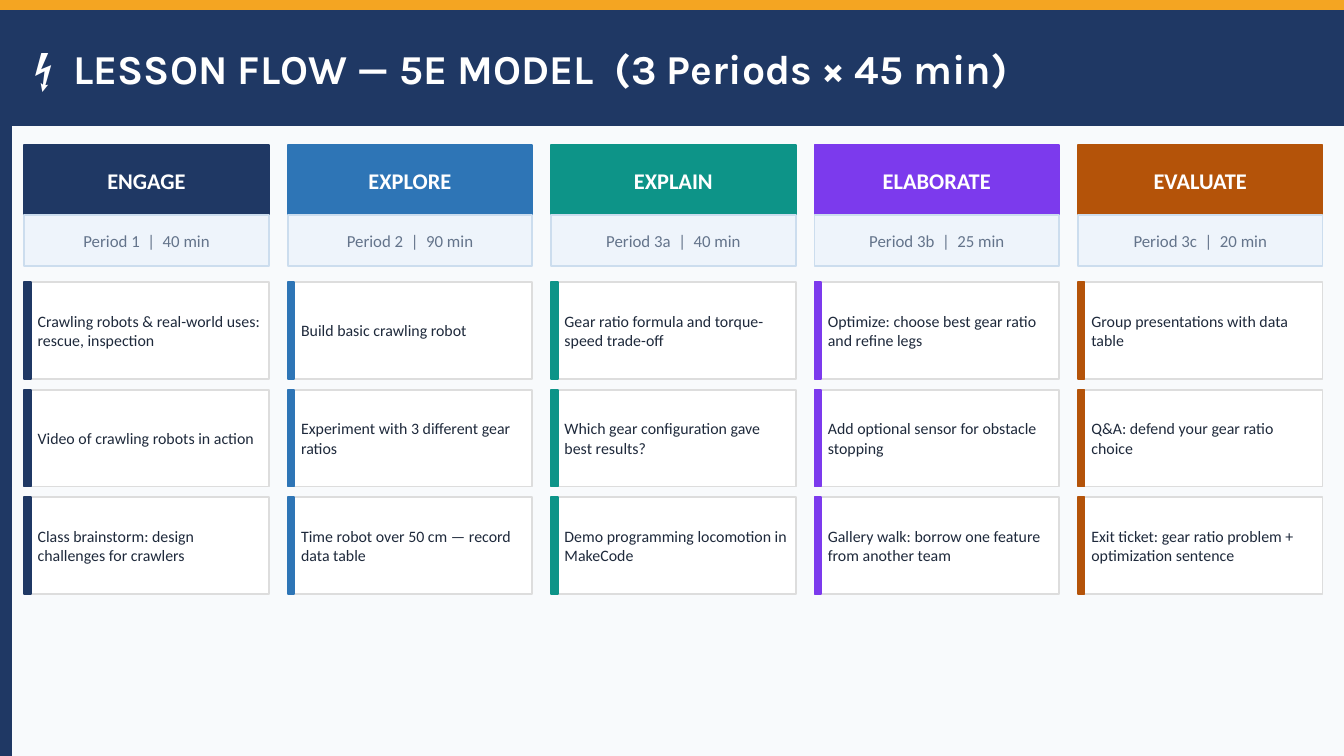
from dataclasses import dataclass

from pptx import Presentation
from pptx.dml.color import RGBColor
from pptx.enum.shapes import MSO_SHAPE
from pptx.enum.text import MSO_ANCHOR, PP_ALIGN
from pptx.util import Pt

NAVY, AMBER, WHITE = "1F3864", "F4A522", "FFFFFF"
SLIDE_W, SLIDE_H = 720, 405
EDGE = 5.76  # thickness of the top and left bands

# Column grid
COL_LEFT, COL_W, COL_PITCH = 12.96, 131.04, 141.12
HEAD_TOP, HEAD_H = 77.76, 37.44
PERIOD_TOP, PERIOD_H = HEAD_TOP + HEAD_H, 27.36
CARD_TOP, CARD_H, CARD_PITCH = 151.2, 51.84, 57.6
ACCENT_W, CARD_INDENT, CARD_TEXT_W = 3.6, 7.2, 120.96


@dataclass
class Phase:
    name: str
    period: str
    color: str
    activities: list[str]


PHASES = [
    Phase("ENGAGE", "Period 1  |  40 min", NAVY, [
        "Crawling robots & real-world uses: rescue, inspection",
        "Video of crawling robots in action",
        "Class brainstorm: design challenges for crawlers"]),
    Phase("EXPLORE", "Period 2  |  90 min", "2E75B6", [
        "Build basic crawling robot",
        "Experiment with 3 different gear ratios",
        "Time robot over 50 cm — record data table"]),
    Phase("EXPLAIN", "Period 3a  |  40 min", "0D9488", [
        "Gear ratio formula and torque-speed trade-off",
        "Which gear configuration gave best results?",
        "Demo programming locomotion in MakeCode"]),
    Phase("ELABORATE", "Period 3b  |  25 min", "7C3AED", [
        "Optimize: choose best gear ratio and refine legs",
        "Add optional sensor for obstacle stopping",
        "Gallery walk: borrow one feature from another team"]),
    Phase("EVALUATE", "Period 3c  |  20 min", "B45309", [
        "Group presentations with data table",
        "Q&A: defend your gear ratio choice",
        "Exit ticket: gear ratio problem + optimization sentence"]),
]


def rgb(color: str) -> RGBColor:
    return RGBColor.from_string(color)


def add_rect(s, x: float, y: float, w: float, h: float,
             fill: str, line: str | None = None) -> None:
    sp = s.shapes.add_shape(MSO_SHAPE.RECTANGLE, Pt(x), Pt(y), Pt(w), Pt(h))
    sp.shadow.inherit = False
    sp.fill.solid()
    sp.fill.fore_color.rgb = rgb(fill)
    sp.line.color.rgb = rgb(line or fill)
    sp.line.width = Pt(1)


def add_text(s, text: str, x: float, y: float, w: float, h: float, *,
             size: float, color: str, font: str = "Calibri",
             bold: bool = False, align: PP_ALIGN = PP_ALIGN.LEFT) -> None:
    tf = s.shapes.add_textbox(Pt(x), Pt(y), Pt(w), Pt(h)).text_frame
    tf.word_wrap = True
    tf.vertical_anchor = MSO_ANCHOR.MIDDLE
    tf.margin_left = tf.margin_top = tf.margin_right = tf.margin_bottom = 0
    p = tf.paragraphs[0]
    p.alignment = align
    r = p.add_run()
    r.text = text
    r.font.name = font
    r.font.size = Pt(size)
    r.font.bold = bold
    r.font.color.rgb = rgb(color)


def add_phase(s, phase: Phase, x: float) -> None:
    # Phase heading and period
    add_rect(s, x, HEAD_TOP, COL_W, HEAD_H, phase.color)
    add_text(s, phase.name, x, HEAD_TOP, COL_W, HEAD_H,
             size=12, color=WHITE, bold=True, align=PP_ALIGN.CENTER)
    add_rect(s, x, PERIOD_TOP, COL_W, PERIOD_H, "EEF4FB", "CCDDEE")
    add_text(s, phase.period, x, PERIOD_TOP, COL_W, PERIOD_H,
             size=9, color="64748B", align=PP_ALIGN.CENTER)

    # Activity cards
    for row, activity in enumerate(phase.activities):
        y = CARD_TOP + row * CARD_PITCH
        add_rect(s, x, y, COL_W, CARD_H, WHITE, "DDDDDD")
        add_rect(s, x, y, ACCENT_W, CARD_H, phase.color)
        add_text(s, activity, x + CARD_INDENT, y, CARD_TEXT_W, CARD_H,
                 size=8.5, color="1E293B")


def main() -> None:
    prs = Presentation()
    prs.slide_width, prs.slide_height = Pt(SLIDE_W), Pt(SLIDE_H)
    s = prs.slides.add_slide(prs.slide_layouts[6])
    s.background.fill.solid()
    s.background.fill.fore_color.rgb = rgb("F8FAFC")

    # Frame bands and title bar
    add_rect(s, 0, 0, SLIDE_W, EDGE, AMBER)
    add_rect(s, 0, EDGE, EDGE, SLIDE_H - EDGE, NAVY)
    add_rect(s, EDGE, EDGE, SLIDE_W - EDGE, 61.2, NAVY)
    add_text(s, "⚡  LESSON FLOW — 5E MODEL  (3 Periods × 45 min)",
             18, EDGE, 684, 61.2, size=22, color=WHITE, font="Karla", bold=True)

    # Phase columns
    for col, phase in enumerate(PHASES):
        add_phase(s, phase, COL_LEFT + col * COL_PITCH)

    prs.save("out.pptx")


if __name__ == "__main__":
    main()
